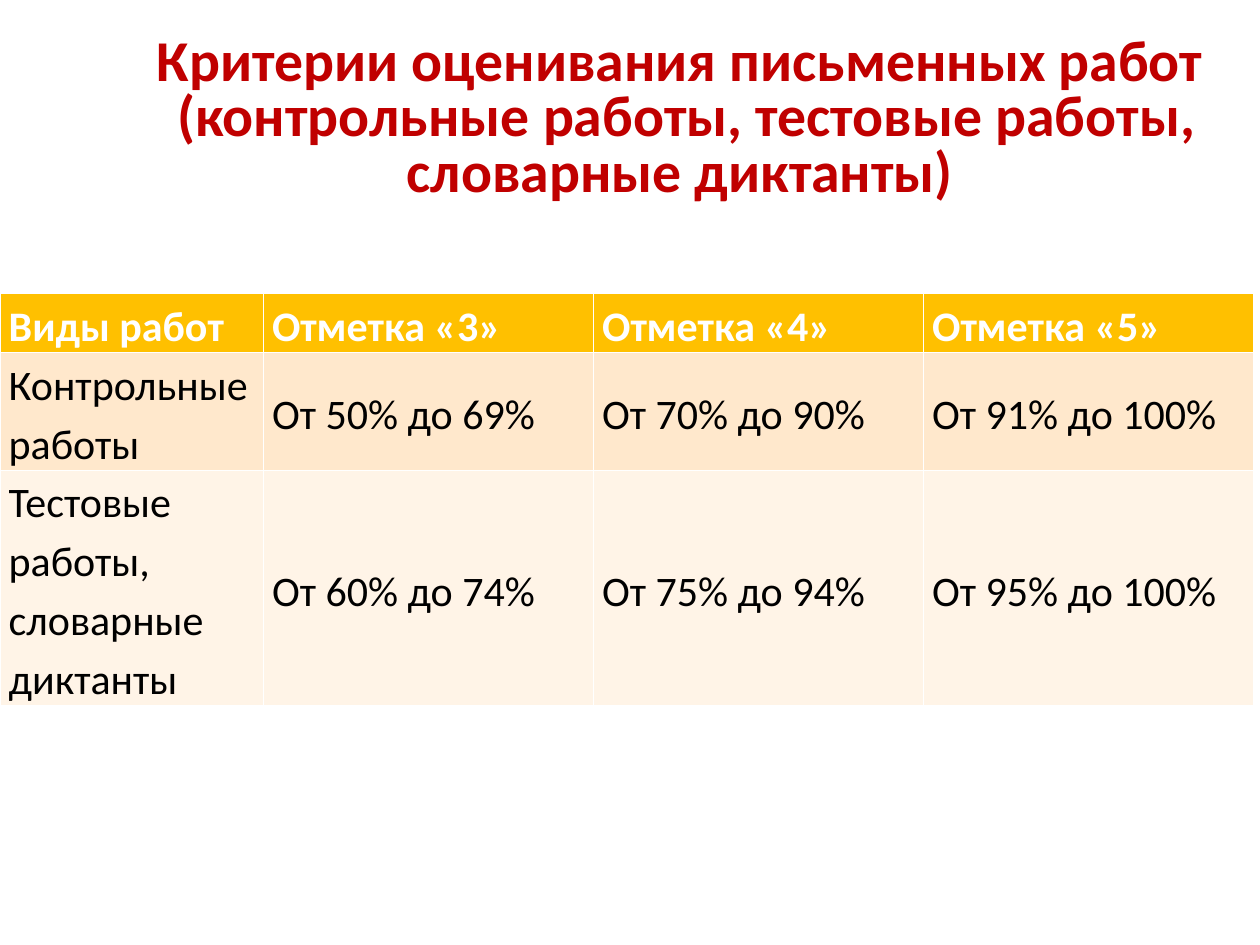
from pptx import Presentation
from pptx.dml.color import RGBColor
from pptx.enum.text import MSO_ANCHOR, PP_ALIGN
from pptx.util import Pt

MIDDLE = MSO_ANCHOR.MIDDLE
CENTER, JUSTIFY = PP_ALIGN.CENTER, PP_ALIGN.JUSTIFY
TITLE_ONLY = 5
FONT = "Calibri"

TITLE_LINES = [
    "Критерии оценивания письменных работ ",
    "(контрольные работы, тестовые работы, словарные диктанты) ",
]
ROWS = [
    ["Виды работ", "Отметка «3»", "Отметка «4»", "Отметка «5»"],
    ["Контрольные работы", "От 50% до 69%", "От 70% до 90%", "От 91% до 100%"],
    ["Тестовые работы, словарные диктанты",
     "От 60% до 74%", "От 75% до 94%", "От 95% до 100%"],
]
ROW_FILLS = ["FFC000", "FFE8CC", "FFF4E7"]
ROW_HEIGHTS = [33, 67, 132]
COLUMN_WIDTHS = [150.5, 188.6, 188.6, 188.6]


def color(hex_string):
    return RGBColor.from_string(hex_string)


def format_paragraph(para, align, spacing, size, text_color, bold):
    para.alignment = align
    para.line_spacing = spacing
    for span in para.runs:
        span.font.name = FONT
        span.font.size = Pt(size)
        span.font.bold = bold
        span.font.color.rgb = color(text_color)


def place_title(page, left, top, width, height):
    title = page.shapes.title
    title.left, title.top = Pt(left), Pt(top)
    title.width, title.height = Pt(width), Pt(height)
    frame = title.text_frame
    frame.word_wrap = True
    frame.vertical_anchor = MIDDLE
    # Extra bottom margin lifts the centred text by half a line
    frame.margin_bottom = Pt(36)
    frame.text = "\n".join(TITLE_LINES)
    for para in frame.paragraphs:
        para.space_before = Pt(0)
        format_paragraph(para, CENTER, 0.8, 33, "C00000", True)


def place_criteria_table(page, left, top):
    table = page.shapes.add_table(
        len(ROWS), len(COLUMN_WIDTHS), Pt(left), Pt(top),
        Pt(sum(COLUMN_WIDTHS)), Pt(sum(ROW_HEIGHTS))).table
    for column, width in zip(table.columns, COLUMN_WIDTHS):
        column.width = Pt(width)
    for row_index, texts in enumerate(ROWS):
        table.rows[row_index].height = Pt(ROW_HEIGHTS[row_index])
        is_header = row_index == 0
        for column_index, text in enumerate(texts):
            cell = table.cell(row_index, column_index)
            cell.fill.solid()
            cell.fill.fore_color.rgb = color(ROW_FILLS[row_index])
            cell.vertical_anchor = MIDDLE
            cell.margin_left = cell.margin_right = Pt(5)
            cell.margin_top = cell.margin_bottom = Pt(0)
            cell.text_frame.text = text
            format_paragraph(cell.text_frame.paragraphs[0], JUSTIFY, 1.15, 24,
                             "FFFFFF" if is_header else "000000", is_header)


def main():
    deck = Presentation()
    deck.slide_width, deck.slide_height = Pt(720), Pt(540)
    page = deck.slides.add_slide(deck.slide_layouts[TITLE_ONLY])
    place_title(page, 75.6, 10.8, 633.6, 148.3)
    place_criteria_table(page, 0, 167.8)
    deck.save("out.pptx")


if __name__ == "__main__":
    main()
